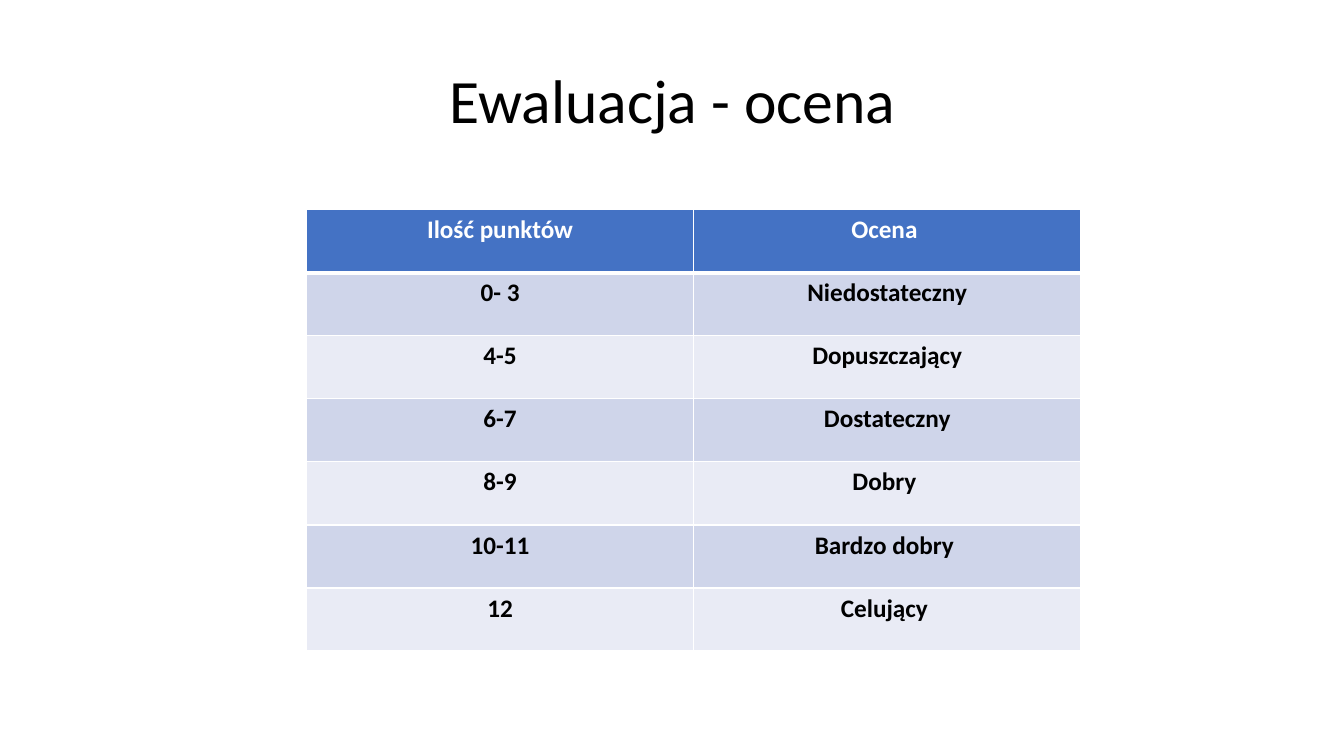
from lxml.etree import SubElement as Sub
from pptx import Presentation
from pptx.dml.color import RGBColor as RGB
from pptx.enum.text import MSO_ANCHOR as Anchor, PP_ALIGN as Align
from pptx.oxml.ns import qn
from pptx.util import Inches, Pt

WHITE = RGB(0xFF, 0xFF, 0xFF)
BLACK = RGB(0x00, 0x00, 0x00)
BLUE = RGB(0x44, 0x72, 0xC4)
BANDS = RGB(0xE9, 0xEB, 0xF5), RGB(0xCF, 0xD5, 0xEA)

GRADES = [
    ("Ilość punktów", "Ocena "),
    ("0- 3", "Niedostateczny"),
    ("4-5", "Dopuszczający"),
    ("6-7", "Dostateczny"),
    ("8-9", "Dobry "),
    ("10-11", "Bardzo dobry "),
    ("12", "Celujący "),
]


class Deck:
    """Holds the text style and the current slide, and draws its title and table."""

    font = "Calibri"

    def __init__(self, show):
        self.slide = show.slides.add_slide(show.slide_layouts[5])

    def label(self, frame, text, size, color, bold=False):
        frame.text = text
        par = frame.paragraphs[0]
        par.alignment = Align.CENTER
        par.font.name = self.font
        par.font.size = Pt(size)
        par.font.bold = bold
        par.font.color.rgb = color
        return par

    def title(self, text, left, top, width, height):
        box = self.slide.shapes.title
        box.left, box.top = Inches(left), Inches(top)
        box.width, box.height = Inches(width), Inches(height)
        box.text_frame.vertical_anchor = Anchor.MIDDLE
        self.label(box.text_frame, text, 44, BLACK).line_spacing = 0.9

    def border(self, cell, side, width):
        props = cell._tc.get_or_add_tcPr()
        line = Sub(props, qn(f"a:ln{side}"), w=str(Pt(width)))
        fill = Sub(line, qn("a:solidFill"))
        Sub(fill, qn("a:srgbClr"), val=str(WHITE))

    def table(self, rows, left, top, width, height):
        frame = self.slide.shapes.add_table(
            len(rows), len(rows[0]),
            Inches(left), Inches(top), Inches(width), Inches(height))
        for r, row in enumerate(rows):
            head = r == 0
            thick = {0: "B", 1: "T"}.get(r)
            for c, text in enumerate(row):
                cell = frame.table.cell(r, c)
                for side in "LRTB":
                    self.border(cell, side, 3 if side == thick else 1)
                cell.fill.solid()
                cell.fill.fore_color.rgb = BLUE if head else BANDS[r % 2]
                self.label(cell.text_frame, text, 18, WHITE if head else BLACK, True)


def main():
    show = Presentation()
    show.slide_width, show.slide_height = Inches(13.33), Inches(7.5)
    deck = Deck(show)
    deck.title("Ewaluacja - ocena", 1.17, 0.5, 11, 1.05)
    deck.table(GRADES, 3.04, 2.08, 7.68, 4.38)
    show.save("out.pptx")


if __name__ == "__main__":
    main()
